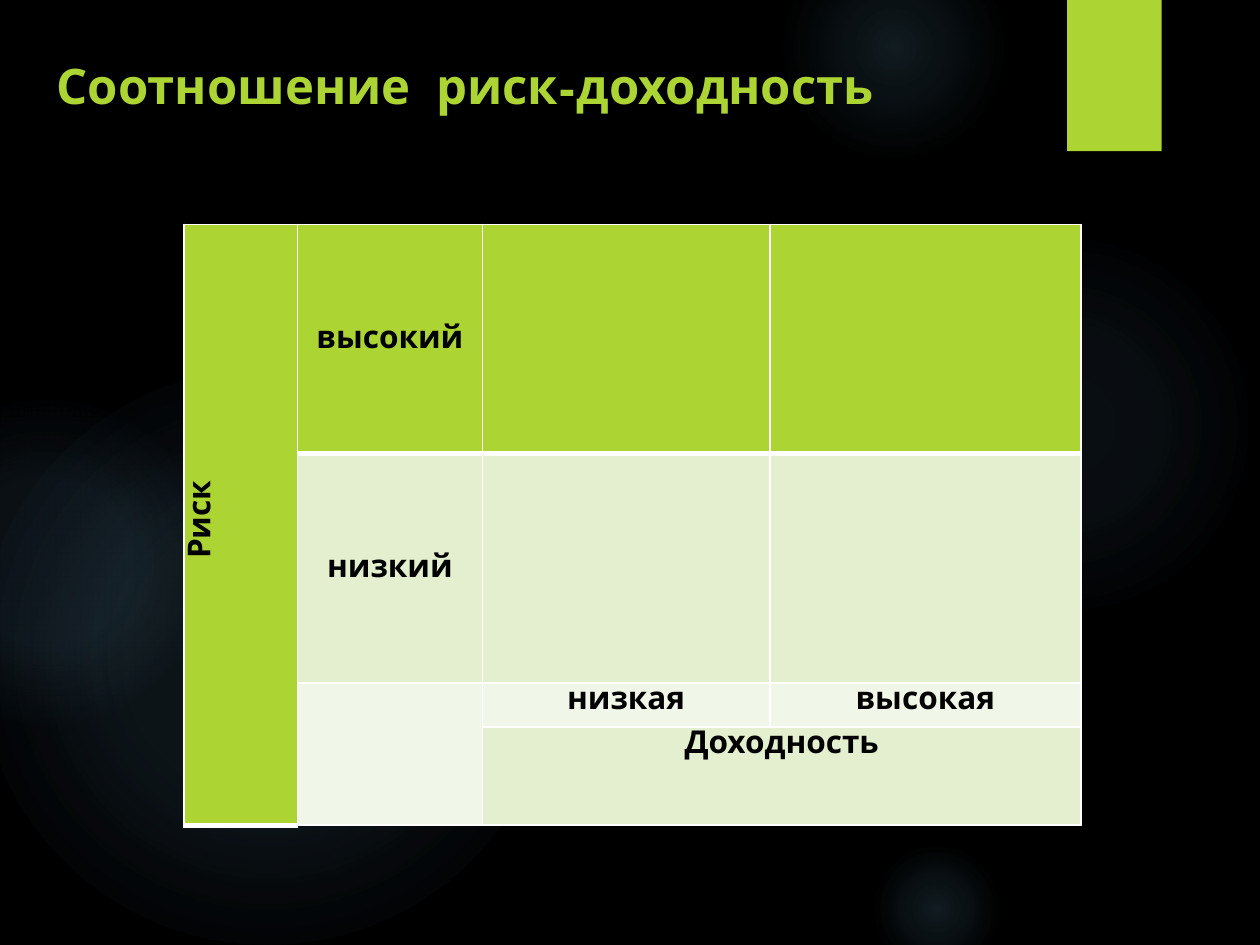
from lxml.etree import SubElement
from pptx import Presentation
from pptx.dml.color import RGBColor
from pptx.enum.shapes import MSO_SHAPE
from pptx.enum.text import MSO_ANCHOR, PP_ALIGN
from pptx.oxml import parse_xml
from pptx.oxml.ns import nsdecls, qn
from pptx.util import Inches, Pt

FONT = "League Spartan"
COLORS = {"night": "000000", "lime": "ACD433", "pale": "E3EFCE",
          "mist": "F1F7E8", "line": "FFFFFF", "glow": "7AC4F0"}

# left, top, diameter, then (position, opacity) stops in percent
GLOWS = [
    (6.89, 1.83, 3.08, [(0, 7), (36, 6), (69, 0)]),
    (6.22, -0.5, 1.75, [(0, 14), (36, 7), (73, 0)]),
    (6.89, 6.67, 1.08, [(0, 14), (36, 7), (66, 0)]),
    (-0.17, 2.92, 4.58, [(0, 11), (36, 10), (75, 0)]),
    (-0.92, 3.17, 2.58, [(0, 8), (36, 8), (72, 0)]),
]

COLUMN_WIDTHS = [0.9, 1.47, 2.28, 2.47]
ROW_HEIGHTS = [1.82, 1.82, 0.35, 0.78]
CELL_FILLS = [
    ["lime", "lime", "lime", "lime"],
    ["lime", "pale", "pale", "pale"],
    ["lime", "mist", "mist", "mist"],
    ["lime", "mist", "pale", "pale"],
]
MERGES = [((0, 0), (3, 0)), ((2, 1), (3, 1)), ((3, 2), (3, 3))]
LABELS = {
    (0, 0): ("Риск", MSO_ANCHOR.TOP),
    (0, 1): ("высокий", MSO_ANCHOR.MIDDLE),
    (1, 1): ("низкий", MSO_ANCHOR.MIDDLE),
    (2, 2): ("низкая", MSO_ANCHOR.TOP),
    (2, 3): ("высокая", MSO_ANCHOR.TOP),
    (3, 2): ("Доходность", MSO_ANCHOR.TOP),
}


def color(name):
    return RGBColor.from_string(COLORS[name])


def set_attributes(target, values):
    for name, value in values.items():
        setattr(target, name, value)


def write_text(para, text, size, color_name):
    span = para.add_run()
    span.text = text
    set_attributes(span.font, {"name": FONT, "size": Pt(size), "bold": True})
    span.font.color.rgb = color(color_name)


def add_glow(page, left, top, diameter, stops):
    """Add a circle whose radial gradient fades out towards its edge."""
    glow = page.shapes.add_shape(MSO_SHAPE.OVAL, Inches(left), Inches(top),
                                 Inches(diameter), Inches(diameter))
    glow.shadow.inherit = False
    glow.line.fill.background()
    stop_xml = "".join(
        f'<a:gs pos="{position * 1000}"><a:srgbClr val="{COLORS["glow"]}">'
        f'<a:alpha val="{opacity * 1000}"/></a:srgbClr></a:gs>'
        for position, opacity in stops)
    gradient = parse_xml(
        f'<a:gradFill {nsdecls("a")} rotWithShape="1"><a:gsLst>{stop_xml}</a:gsLst>'
        '<a:path path="circle"><a:fillToRect l="50000" t="50000" r="50000" '
        'b="50000"/></a:path></a:gradFill>')
    glow.element.spPr.find(qn("a:prstGeom")).addnext(gradient)


def add_corner_tab(page, left, top, width, height):
    tab = page.shapes.add_shape(MSO_SHAPE.RECTANGLE, Inches(left), Inches(top),
                                Inches(width), Inches(height))
    tab.shadow.inherit = False
    tab.fill.solid()
    tab.fill.fore_color.rgb = color("lime")
    tab.line.fill.background()
    effects = tab.element.spPr.find(qn("a:effectLst"))
    effects.append(parse_xml(
        f'<a:outerShdw {nsdecls("a")} blurRad="{Pt(3)}" dist="{Pt(2)}" dir="5400000" '
        'rotWithShape="0"><a:srgbClr val="000000"><a:alpha val="45000"/>'
        '</a:srgbClr></a:outerShdw>'))


def place_title(page, left, top, width, height):
    title = page.shapes.title
    set_attributes(title, {"left": Inches(left), "top": Inches(top),
                           "width": Inches(width), "height": Inches(height)})
    set_attributes(title.text_frame, {"word_wrap": True,
                                      "vertical_anchor": MSO_ANCHOR.TOP})
    para = title.text_frame.paragraphs[0]
    set_attributes(para, {"alignment": PP_ALIGN.LEFT, "space_before": Pt(10)})
    write_text(para, "Соотношение  риск-доходность", 28, "lime")
    title.element.getparent().append(title.element)  # in front of the glows


def draw_borders(cell, top, bottom):
    """Draw the four cell borders; top and bottom widths are in points."""
    properties = cell._tc.get_or_add_tcPr()
    widths = {"lnL": 1, "lnR": 1, "lnT": top, "lnB": bottom}
    for index, (side, width) in enumerate(widths.items()):
        line = parse_xml(f'<a:{side} {nsdecls("a")} w="{Pt(width)}"/>')
        fill = SubElement(line, qn("a:solidFill"))
        SubElement(fill, qn("a:srgbClr")).set("val", COLORS["line"])
        properties.insert(index, line)


def label_cell(cell, text, anchor):
    set_attributes(cell, {"vertical_anchor": anchor,
                          "margin_left": Inches(0.07), "margin_right": Inches(0.07),
                          "margin_top": 0, "margin_bottom": 0})
    para = cell.text_frame.paragraphs[0]
    set_attributes(para, {"alignment": PP_ALIGN.CENTER, "line_spacing": 1.15})
    write_text(para, text, 18, "night")


def add_risk_matrix(page, left, top):
    frame = page.shapes.add_table(
        len(ROW_HEIGHTS), len(COLUMN_WIDTHS), Inches(left), Inches(top),
        Inches(sum(COLUMN_WIDTHS)), Inches(sum(ROW_HEIGHTS)))
    table = frame.table
    set_attributes(table, {"first_row": False, "horz_banding": False})
    for column, width in zip(table.columns, COLUMN_WIDTHS):
        column.width = Inches(width)
    for row, height in zip(table.rows, ROW_HEIGHTS):
        row.height = Inches(height)
    for first, last in MERGES:
        table.cell(*first).merge(table.cell(*last))
    for row, fills in enumerate(CELL_FILLS):
        for column, fill in enumerate(fills):
            cell = table.cell(row, column)
            cell.fill.solid()
            cell.fill.fore_color.rgb = color(fill)
            draw_borders(cell, top=3 if row == 1 else 1,
                         bottom=3 if row == 0 or column == 0 else 1)
    for position, (text, anchor) in LABELS.items():
        label_cell(table.cell(*position), text, anchor)
    risk = table.cell(0, 0)
    risk._tc.get_or_add_tcPr().set("vert", "vert270")
    risk.text_frame.paragraphs[0]._p.get_or_add_pPr().set("marL", str(Inches(0.08)))


def main():
    deck = Presentation()
    set_attributes(deck, {"slide_width": Inches(10), "slide_height": Inches(7.5)})
    page = deck.slides.add_slide(deck.slide_layouts[5])
    page.background.fill.solid()
    page.background.fill.fore_color.rgb = color("night")
    for glow in GLOWS:
        add_glow(page, *glow)
    add_corner_tab(page, 8.47, 0, 0.75, 1.2)
    add_risk_matrix(page, 1.46, 1.78)
    place_title(page, 0.35, 0.39, 7.24, 0.94)
    deck.save("out.pptx")


if __name__ == "__main__":
    main()
